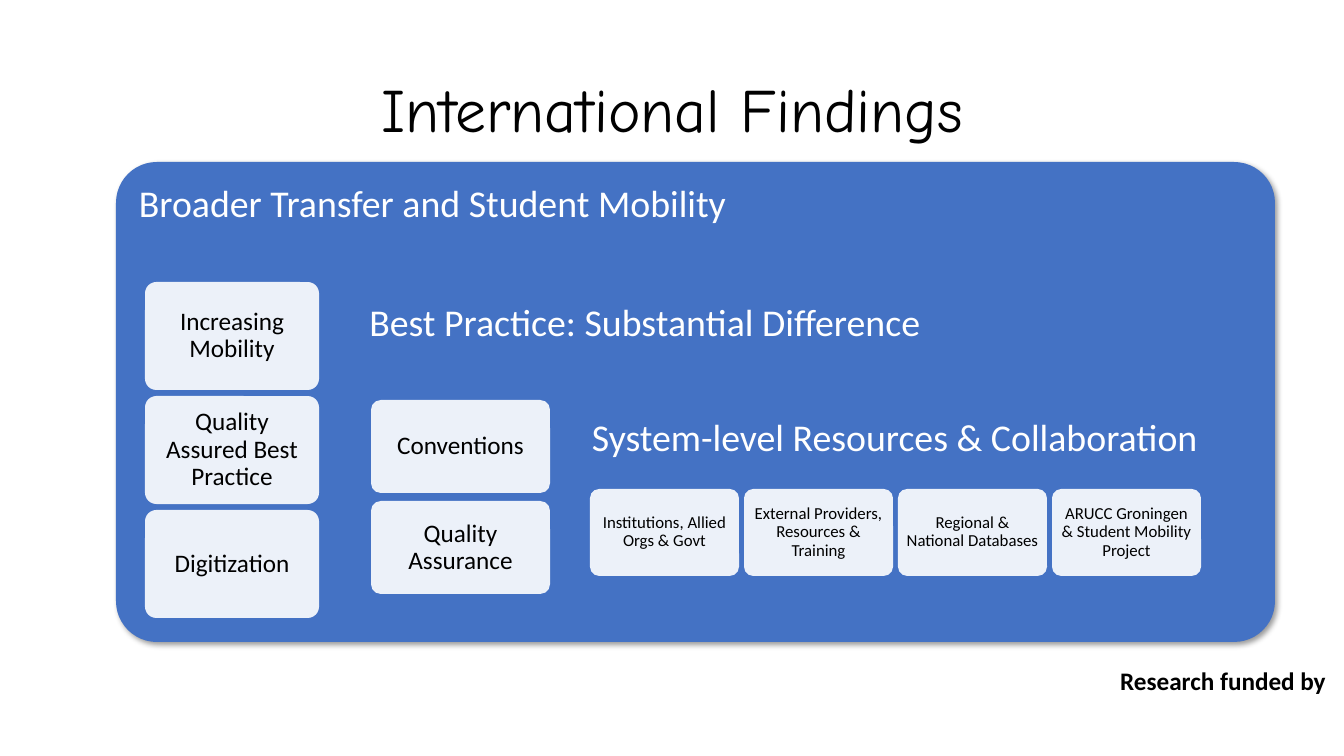
from lxml import etree
from pptx import Presentation
from pptx.dml.color import RGBColor
from pptx.enum.shapes import MSO_SHAPE as Shape
from pptx.enum.text import MSO_ANCHOR as Anchor, MSO_AUTO_SIZE as AutoSize, PP_ALIGN as Align
from pptx.oxml.ns import qn
from pptx.util import Pt

COLORS = {"text": "000000", "light": "FFFFFF", "panel": "4472C4", "shadow": "000000"}
BODY_FONT, TITLE_FONT = "Calibri", "Comic Neue"
TITLE_ONLY = 5


def px(length):
    return round(length * 914400 / 100.8)


def write(frame, text, size=18, color="text", font=BODY_FONT, bold=False,
          align=Align.CENTER, anchor=Anchor.MIDDLE, inset=7, spacing=0.9):
    frame.word_wrap = True
    frame.auto_size = AutoSize.NONE
    frame.vertical_anchor = anchor
    frame.margin_left = frame.margin_right = px(inset)
    frame.margin_top = frame.margin_bottom = px(inset)
    paragraph = frame.paragraphs[0]
    paragraph.text = text
    paragraph.alignment = align
    paragraph.line_spacing = spacing
    paragraph.font.size = Pt(size)
    paragraph.font.bold = bold
    paragraph.font.name = font
    paragraph.font.color.rgb = RGBColor.from_string(COLORS[color])


class FindingsSlide:
    def __init__(self, presentation):
        self.slide = presentation.slides.add_slide(presentation.slide_layouts[TITLE_ONLY])

    def title(self, text, left, top, width, height):
        shape = self.slide.shapes.title
        shape.left, shape.top, shape.width, shape.height = map(px, (left, top, width, height))
        write(shape.text_frame, text, size=44, font=TITLE_FONT)

    def label(self, text, left, top, width, height):
        shape = self.slide.shapes.add_textbox(*map(px, (left, top, width, height)))
        write(shape.text_frame, text, bold=True, align=Align.RIGHT,
              anchor=Anchor.TOP, inset=10, spacing=1.0)
        shape.text_frame.margin_top = px(5)

    def rounded(self, box, color, corner):
        shape = self.slide.shapes.add_shape(Shape.ROUNDED_RECTANGLE, *map(px, box))
        shape.adjustments[0] = corner
        shape.shadow.inherit = False
        shape.line.fill.background()
        shape.fill.solid()
        shape.fill.fore_color.rgb = RGBColor.from_string(COLORS[color])
        return shape

    def panel(self, heading, box, corner=0.105, shadow=False):
        shape = self.rounded(box, "panel", corner)
        write(shape.text_frame, heading, size=27, color="light",
              align=Align.LEFT, anchor=Anchor.TOP, inset=11)
        if shadow:
            self.add_shadow(shape)

    def add_shadow(self, shape):
        effects = shape.element.spPr.find(qn("a:effectLst"))
        outer = etree.SubElement(effects, qn("a:outerShdw"), blurRad=str(Pt(4)),
                                 dist=str(Pt(3)), dir="2700000", algn="tl", rotWithShape="0")
        color = etree.SubElement(outer, qn("a:srgbClr"), val=COLORS["shadow"])
        etree.SubElement(color, qn("a:alpha"), val="40000")

    def cards(self, texts, box, step_x=0, step_y=0, size=18, inset=7):
        left, top, width, height = box
        for index, text in enumerate(texts):
            place = (left + index * step_x, top + index * step_y, width, height)
            shape = self.rounded(place, "light", 0.105)
            color = shape.element.spPr.find(qn("a:solidFill"))[0]
            etree.SubElement(color, qn("a:alpha"), val="90000")
            write(shape.text_frame, text, size=size, inset=inset)


def main():
    presentation = Presentation()
    presentation.slide_width, presentation.slide_height = px(1344), px(756)
    findings = FindingsSlide(presentation)

    # Title and funding line
    findings.title("International Findings", 93, 40, 1159, 146)
    findings.label("Research funded by", 1034, 660, 302, 40)

    # Outer panel
    findings.panel("Broader Transfer and Student Mobility", (116, 162, 1159, 480),
                   corner=0.085, shadow=True)
    findings.cards(["Increasing Mobility", "Quality Assured Best Practice", "Digitization"],
                   (145, 282, 174, 108), step_y=114)

    # Middle panel
    findings.panel("Best Practice: Substantial Difference", (348, 282, 898, 336))
    findings.cards(["Conventions", "Quality Assurance"], (371, 400, 179, 93), step_y=101)

    # Inner panel
    findings.panel("System-level Resources & Collaboration", (575, 402, 643, 192))
    findings.cards(["Institutions, Allied Orgs & Govt",
                    "External Providers, Resources & Training",
                    "Regional & National Databases",
                    "ARUCC Groningen & Student Mobility Project"],
                   (590, 489, 149, 87), step_x=154, size=12, inset=5)

    presentation.save("out.pptx")


if __name__ == "__main__":
    main()
